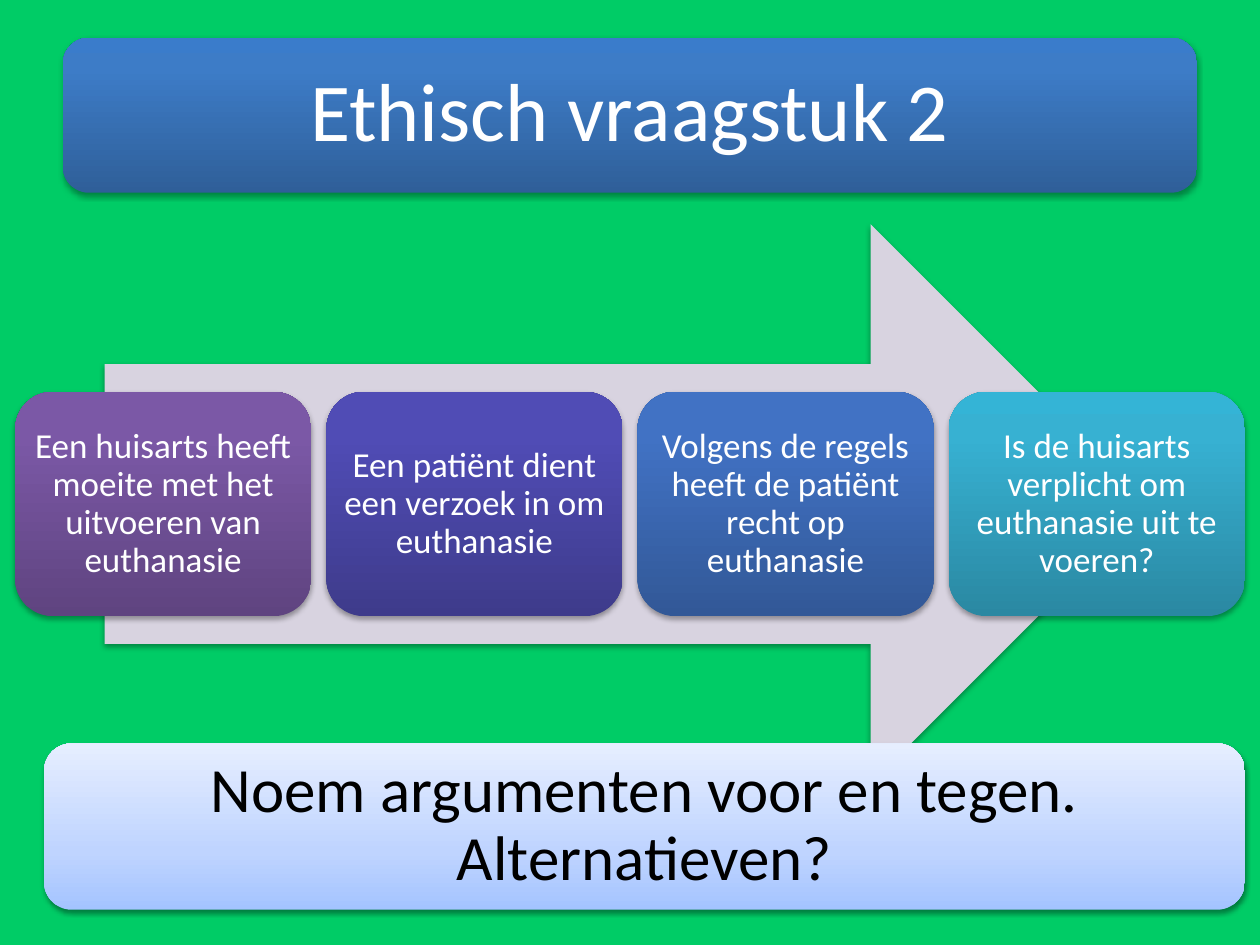
from copy import deepcopy

from pptx import Presentation
from pptx.dml.color import RGBColor
from pptx.enum.shapes import MSO_SHAPE as Shape
from pptx.enum.text import MSO_ANCHOR as Anchor, PP_ALIGN as Align
from pptx.oxml import parse_xml
from pptx.oxml.ns import nsdecls
from pptx.util import Inches, Pt

GREEN = RGBColor(0x00, 0xCC, 0x66)
LILAC = RGBColor(0xD8, 0xD3, 0xE0)
WHITE = RGBColor(0xFF, 0xFF, 0xFF)
BLACK = RGBColor(0x00, 0x00, 0x00)

TITLE_BLUES = [(0, RGBColor(0x2F, 0x5F, 0x99)), (0.8, RGBColor(0x3D, 0x7C, 0xC7)), (1, RGBColor(0x3A, 0x7C, 0xCB))]
PURPLES = [(0, RGBColor(0x5F, 0x44, 0x80)), (0.8, RGBColor(0x7B, 0x58, 0xA6)), (1, RGBColor(0x7C, 0x57, 0xA8))]
INDIGOS = [(0, RGBColor(0x3E, 0x3B, 0x8B)), (0.8, RGBColor(0x50, 0x4C, 0xB5)), (1, RGBColor(0x4F, 0x4B, 0xB8))]
BLUES = [(0, RGBColor(0x32, 0x58, 0x97)), (0.8, RGBColor(0x41, 0x72, 0xC4)), (1, RGBColor(0x3F, 0x72, 0xC7))]
TEALS = [(0, RGBColor(0x2A, 0x88, 0xA2)), (0.8, RGBColor(0x37, 0xB1, 0xD2)), (1, RGBColor(0x34, 0xB4, 0xD6))]
PALE_BLUES = [(0, RGBColor(0xA4, 0xC4, 0xFF)), (0.35, RGBColor(0xBF, 0xD4, 0xFF)), (1, RGBColor(0xE6, 0xEE, 0xFF))]

STEPS = [
    ("Een huisarts heeft moeite met het uitvoeren van euthanasie", PURPLES),
    ("Een patiënt dient een verzoek in om euthanasie", INDIGOS),
    ("Volgens de regels heeft de patiënt recht op euthanasie", BLUES),
    ("Is de huisarts verplicht om euthanasie uit te voeren?", TEALS),
]


class SlideBuilder:
    font_name = "Calibri"
    columns = 100
    rows = 75

    def __init__(self, deck):
        self.page = deck.slides.add_slide(deck.slide_layouts[6])
        self.column = deck.slide_width / self.columns
        self.row = deck.slide_height / self.rows

    def background(self, color):
        fill = self.page.background.fill
        fill.solid()
        fill.fore_color.rgb = color

    def shape(self, kind, left, top, width, height):
        shape = self.page.shapes.add_shape(
            kind, int(left * self.column), int(top * self.row),
            int(width * self.column), int(height * self.row))
        shape.line.fill.background()
        return shape

    def shadow(self, shape, opacity=35, distance=1.8):
        shape.shadow.inherit = False
        properties = shape.element.spPr
        properties.remove(properties.find("{*}effectLst"))
        properties.append(parse_xml(
            f'<a:effectLst {nsdecls("a")}>'
            f'<a:outerShdw blurRad="{Pt(3.1)}" dist="{Pt(distance)}" dir="5400000" rotWithShape="0">'
            f'<a:srgbClr val="000000"><a:alpha val="{opacity * 1000}"/></a:srgbClr>'
            '</a:outerShdw></a:effectLst>'))

    def gradient(self, shape, stops):
        fill = shape.fill
        fill.gradient()
        fill.gradient_angle = 90
        stop_list = shape.element.spPr.find("{*}gradFill/{*}gsLst")
        stop_list.append(deepcopy(stop_list[-1]))
        for stop, (position, color) in zip(fill.gradient_stops, stops):
            stop.position = position
            stop.color.rgb = color

    def arrow(self, left, top, width, height, color):
        arrow = self.shape(Shape.RIGHT_ARROW, left, top, width, height)
        arrow.fill.solid()
        arrow.fill.fore_color.rgb = color
        self.shadow(arrow)

    def panel(self, text, left, top, width, height, stops, size,
              color=WHITE, margin=0, opacity=35, distance=1.8):
        panel = self.shape(Shape.ROUNDED_RECTANGLE, left, top, width, height)
        self.gradient(panel, stops)
        self.shadow(panel, opacity, distance)
        frame = panel.text_frame
        frame.text = text
        frame.word_wrap = True
        frame.vertical_anchor = Anchor.MIDDLE
        frame.margin_left = frame.margin_right = Inches(margin)
        frame.margin_top = frame.margin_bottom = Inches(margin)
        para = frame.paragraphs[0]
        para.alignment = Align.CENTER
        para.line_spacing = 0.9
        for span in para.runs:
            span.font.name = self.font_name
            span.font.size = Pt(size)
            span.font.color.rgb = color


def main():
    deck = Presentation()
    deck.slide_width = Inches(10)
    deck.slide_height = Inches(7.5)
    builder = SlideBuilder(deck)
    builder.background(GREEN)
    builder.panel("Ethisch vraagstuk 2", 5, 3, 90, 12.3, TITLE_BLUES, 47, margin=0.2)
    builder.arrow(8.3, 17.8, 83, 44.4, LILAC)
    card_width, gap = 23.5, 1.2
    for index, (text, stops) in enumerate(STEPS):
        left = gap + index * (card_width + gap)
        builder.panel(text, left, 31.1, card_width, 17.8, stops, 20)
    builder.panel("Noem argumenten voor en tegen. Alternatieven?", 3.5, 59, 95.3, 13.2,
                  PALE_BLUES, 36, color=BLACK, margin=0.15, opacity=38, distance=1.6)
    deck.save("out.pptx")


if __name__ == "__main__":
    main()
